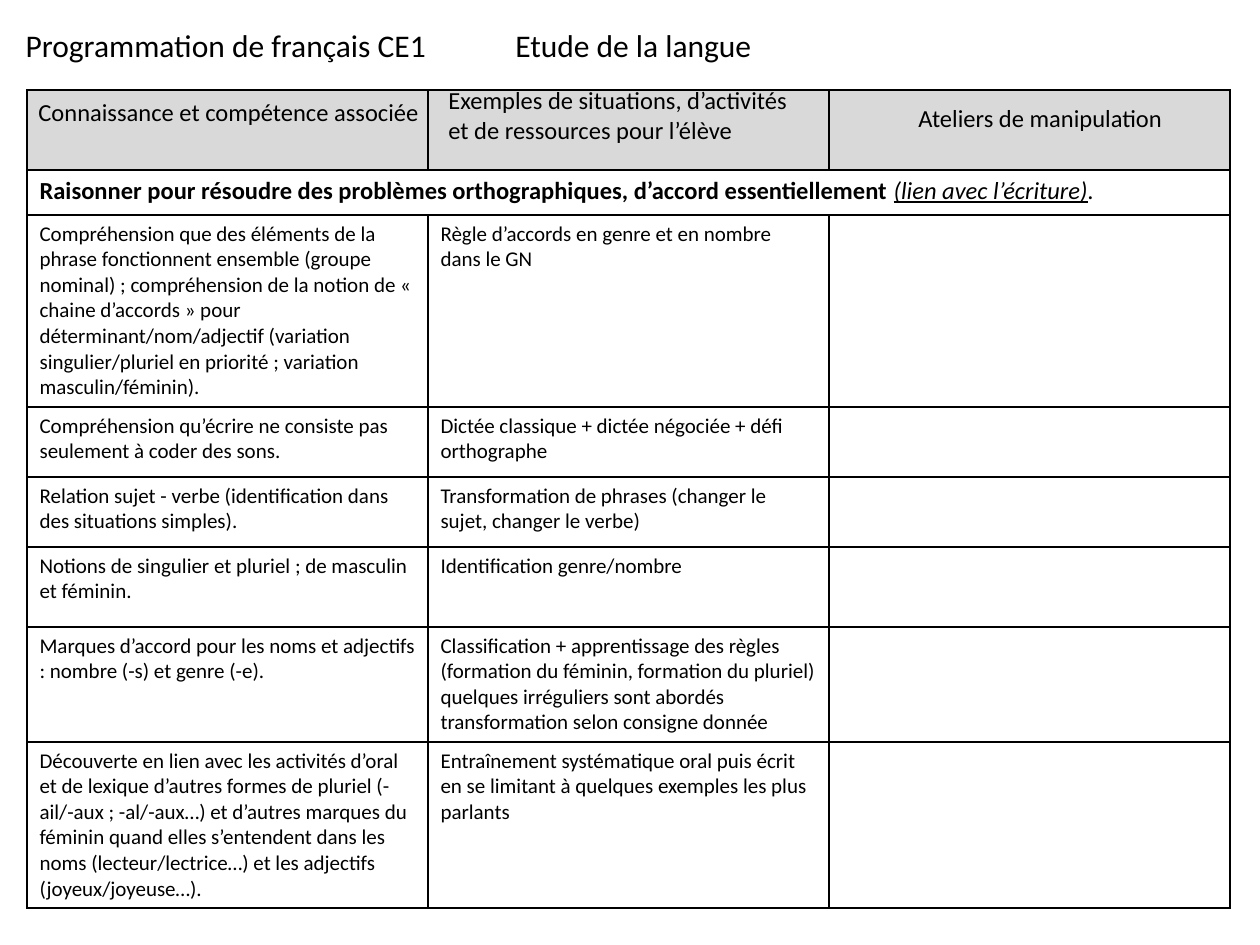
"""Build the CE1 French programme slide: a bordered table with heading labels."""
from lxml import etree
from pptx import Presentation
from pptx.dml.color import RGBColor
from pptx.enum.text import MSO_ANCHOR, MSO_AUTO_SIZE, PP_ALIGN
from pptx.oxml.ns import qn
from pptx.util import Pt

LEFT = PP_ALIGN.LEFT
TOP = MSO_ANCHOR.TOP
GROW = MSO_AUTO_SIZE.SHAPE_TO_FIT_TEXT

PX = 914400 / 126
FONT = "Calibri"
COLORS = {"ink": "000000", "header": "D9D9D9"}

TITLE = ("Programmation de français CE1", (13, 20, 432, 50), 18, False)
LABELS = [
    ("Etude de la langue", (503, 20, 265, 50), 18, False),
    ("Connaissance et compétence associée", (26, 91, 410, 43), 14, False),
    ("Exemples de situations, d’activités\net de ressources pour l’élève", (436, 79, 370, 72), 14, True),
    ("Ateliers de manipulation", (906, 97, 272, 43), 14, False),
]

SECTION = [
    ("Raisonner pour résoudre des problèmes orthographiques, d’accord essentiellement ", {"bold": True}),
    ("(lien avec l’écriture)", {"italic": True, "underline": True}),
    (".", {"italic": True}),
]
SKILLS = [
    ("Compréhension que des éléments de la phrase fonctionnent ensemble (groupe nominal) ; "
     "compréhension de la notion de « chaine d’accords » pour déterminant/nom/adjectif "
     "(variation singulier/pluriel en priorité ; variation masculin/féminin).",
     "Règle d’accords en genre et en nombre dans le GN"),
    ("Compréhension qu’écrire ne consiste pas seulement à coder des sons.",
     "Dictée classique + dictée négociée + défi orthographe"),
    ("Relation sujet - verbe (identification dans des situations simples).",
     "Transformation de phrases (changer le sujet, changer le verbe)"),
    ("Notions de singulier et pluriel ; de masculin et féminin.",
     "Identification genre/nombre"),
    ("Marques d’accord pour les noms et adjectifs : nombre (-s) et genre (-e).",
     "Classification + apprentissage des règles (formation du féminin, formation du pluriel) "
     "quelques irréguliers sont abordés\ntransformation selon consigne donnée"),
    ("Découverte en lien avec les activités d’oral et de lexique d’autres formes de pluriel "
     "(-ail/-aux ; -al/-aux…) et d’autres marques du féminin quand elles s’entendent dans les "
     "noms (lecteur/lectrice…) et les adjectifs (joyeux/joyeuse…).",
     "Entraînement systématique oral puis écrit en se limitant à quelques exemples les plus parlants"),
]
TABLE_LEFT, TABLE_TOP = 27, 90
COLUMN_WIDTH, COLUMN_COUNT = 401, 3
ROW_HEIGHTS = [80, 45, 192, 70, 70, 80, 115, 166]


def px(value):
    return round(value * PX)


def style_font(font, size):
    font.name = FONT
    font.size = Pt(size)
    font.color.rgb = RGBColor.from_string(COLORS["ink"])


def write(frame, text, size):
    frame.text = text
    for paragraph in frame.paragraphs:
        paragraph.alignment = LEFT
        style_font(paragraph.font, size)


def place_label(shape, text, box, size, wrap):
    shape.left, shape.top, shape.width, shape.height = map(px, box)
    frame = shape.text_frame
    write(frame, text, size)
    frame.word_wrap = wrap
    frame.auto_size = GROW
    frame.vertical_anchor = TOP


def add_borders(cell):
    properties = cell._tc.get_or_add_tcPr()
    for index, side in enumerate(("a:lnL", "a:lnR", "a:lnT", "a:lnB")):
        line = etree.Element(qn(side), w=str(Pt(1)))
        fill = etree.SubElement(line, qn("a:solidFill"))
        etree.SubElement(fill, qn("a:srgbClr"), val=COLORS["ink"])
        properties.insert(index, line)


def add_programme(slide):
    table = slide.shapes.add_table(
        len(ROW_HEIGHTS), COLUMN_COUNT, px(TABLE_LEFT), px(TABLE_TOP),
        px(COLUMN_WIDTH * COLUMN_COUNT), px(sum(ROW_HEIGHTS))).table
    table.first_row = table.horz_banding = False
    for column in table.columns:
        column.width = px(COLUMN_WIDTH)
    for row_index, height in enumerate(ROW_HEIGHTS):
        table.rows[row_index].height = px(height)
        for cell in table.rows[row_index].cells:
            if row_index == 0:
                cell.fill.solid()
                cell.fill.fore_color.rgb = RGBColor.from_string(COLORS["header"])
            else:
                cell.fill.background()
            add_borders(cell)

    section = table.cell(1, 0)
    section.merge(table.cell(1, COLUMN_COUNT - 1))
    heading = section.text_frame.paragraphs[0]
    style_font(heading.font, 14)
    for text, emphasis in SECTION:
        run = heading.add_run()
        run.text = text
        style_font(run.font, 14)
        for attribute, value in emphasis.items():
            setattr(run.font, attribute, value)

    for row_index, texts in enumerate(SKILLS, start=2):
        for column_index, text in enumerate(texts):
            write(table.cell(row_index, column_index).text_frame, text, 12)


def main():
    presentation = Presentation()
    presentation.slide_width, presentation.slide_height = px(1260), px(945)
    slide = presentation.slides.add_slide(presentation.slide_layouts[5])
    add_programme(slide)
    place_label(slide.shapes.title, *TITLE)
    for label in LABELS:
        place_label(slide.shapes.add_textbox(0, 0, 0, 0), *label)
    presentation.save("out.pptx")


if __name__ == "__main__":
    main()
